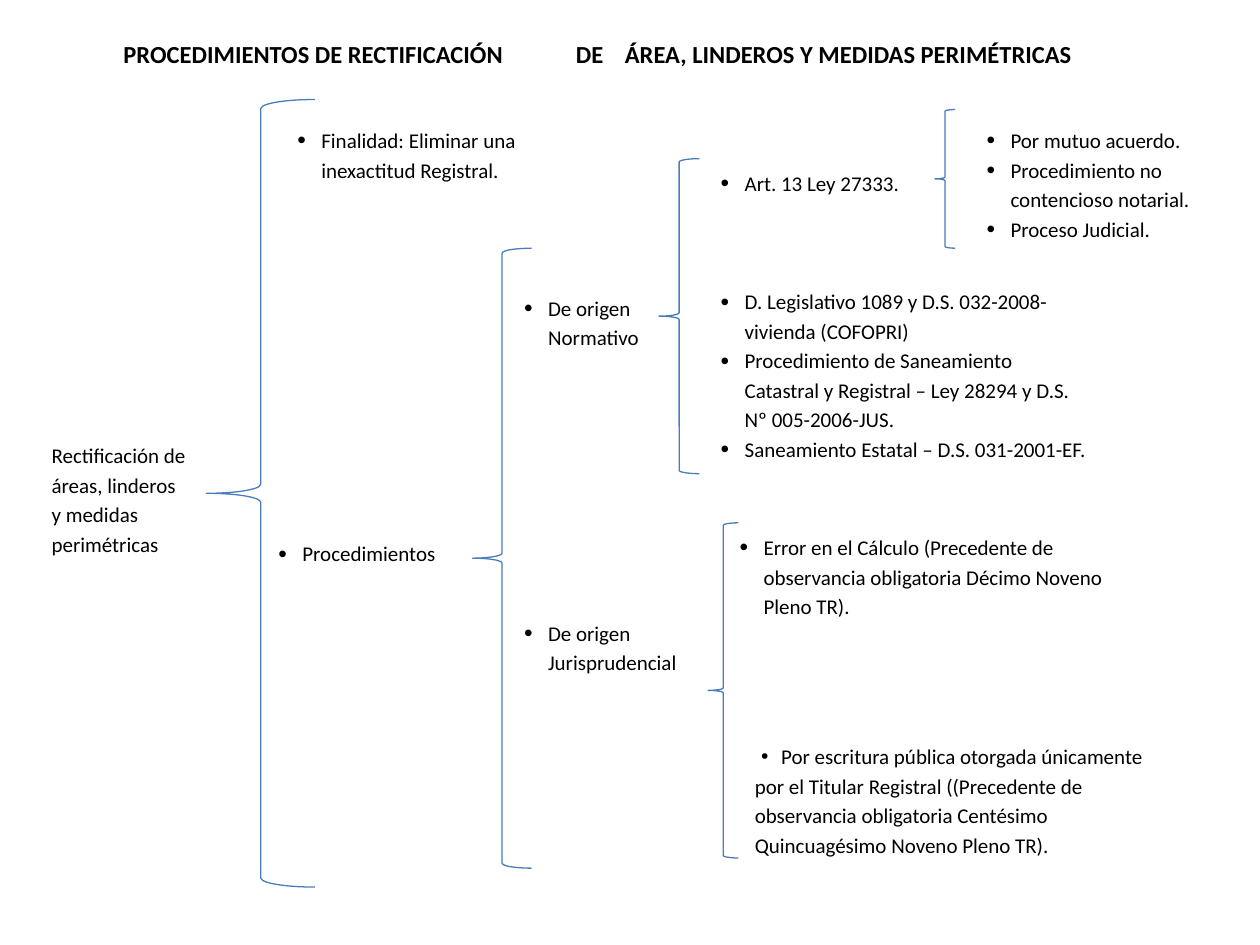
from lxml import etree
from pptx import Presentation
from pptx.dml.color import RGBColor
from pptx.enum.shapes import MSO_SHAPE
from pptx.oxml.ns import qn
from pptx.util import Inches, Pt

BRACE = MSO_SHAPE.LEFT_BRACE
BLUE = RGBColor(0x49, 0x7D, 0xBA)
BLACK = RGBColor(0, 0, 0)
FONT = "Calibri"
HANG = 0.19  # bullet to text

# Title pieces: left, width, text
TITLE = [
    (0.98, 3.54, "PROCEDIMIENTOS DE RECTIFICACIÓN"),
    (4.57, 0.31, "DE"),
    (4.96, 4.1, "ÁREA, LINDEROS Y MEDIDAS PERIMÉTRICAS"),
]

# Braces: left, top, width, height
BRACES = [
    (1.64, 0.79, 0.86, 6.25),
    (3.75, 1.97, 0.47, 4.92),
    (5.23, 1.26, 0.32, 2.5),
    (7.42, 0.87, 0.16, 1.1),
    (5.62, 4.15, 0.24, 2.66),
]

# Bulleted lists: left and top of the text, width, items (\v breaks a line)
LISTS = [
    (2.55, 0.98, 1.86, ["Finalidad: Eliminar una\vinexactitud Registral."]),
    (2.4, 4.26, 1.29, ["Procedimientos"]),
    (4.35, 2.31, 0.9, ["De origen\vNormativo"]),
    (4.35, 4.89, 1.25, ["De origen\vJurisprudencial"]),
    (5.91, 1.32, 1.49, ["Art. 13 Ley 27333."]),
    (8.02, 0.98, 1.72, [
        "Por mutuo acuerdo.",
        "Procedimiento no\vcontencioso notarial.",
        "Proceso Judicial.",
    ]),
    (5.91, 2.26, 3.22, [
        "D. Legislativo 1089 y D.S. 032-2008-\vvivienda (COFOPRI)",
        "Procedimiento de Saneamiento\v"
        "Catastral y Registral – Ley 28294 y D.S.\vNº 005-2006-JUS.",
        "Saneamiento Estatal – D.S. 031-2001-EF.",
    ]),
    (6.06, 4.21, 3.2, [
        "Error en el Cálculo (Precedente de\v"
        "observancia obligatoria Décimo Noveno\vPleno TR).",
    ]),
]

ROOT = "Rectificación de\váreas, linderos\vy medidas\vperimétricas"
DEED = [
    "Por escritura pública otorgada únicamente",
    "por el Titular Registral ((Precedente de\v"
    "observancia obligatoria Centésimo\vQuincuagésimo Noveno Pleno TR).",
]


def add_text(slide, left, top, width, items, size=12, bold=False):
    pitch = 16.85 if size == 12 else 17.2
    lines = sum(item.count("\v") + 1 for item in items)
    box = slide.shapes.add_textbox(
        Inches(left), Inches(top), Inches(width), Inches(lines * pitch / 72))
    frame = box.text_frame
    frame.margin_left = frame.margin_right = 0
    frame.margin_top = frame.margin_bottom = 0
    frame.word_wrap = False
    for i, item in enumerate(items):
        para = frame.paragraphs[0] if i == 0 else frame.add_paragraph()
        para.text = item
        para.line_spacing = Pt(pitch)
        para.font.name = FONT
        para.font.size = Pt(size)
        para.font.bold = bold
        para.font.color.rgb = BLACK
    return frame.paragraphs


def set_bullet(para, margin=HANG, hang=HANG, scale=117):
    props = para._p.get_or_add_pPr()
    props.set("marL", str(Inches(margin)))
    props.set("indent", str(-Inches(hang)))
    parts = [("a:buSzPct", "val", str(scale * 1000)),
             ("a:buFont", "typeface", "Arial"),
             ("a:buChar", "char", "•")]
    marks = [etree.Element(qn(tag), {key: val}) for tag, key, val in parts]
    # Bullet marks stand before the default run properties
    spot = props.index(props.find(qn("a:defRPr")))
    props[spot:spot] = marks


def main():
    deck = Presentation()
    deck.slide_width, deck.slide_height = Inches(10), Inches(7.5)
    slide = deck.slides.add_slide(deck.slide_layouts[6])

    # Braces
    for spot in BRACES:
        brace = slide.shapes.add_shape(BRACE, *map(Inches, spot))
        brace.shadow.inherit = False
        brace.fill.background()
        brace.line.color.rgb = BLUE
        brace.line.width = Pt(0.75)

    # Title
    for left, width, text in TITLE:
        add_text(slide, left, 0.3, width, [text], 14, True)

    # Root and bulleted branches
    add_text(slide, 0.41, 3.48, 1.3, [ROOT])
    for left, top, width, items in LISTS:
        for para in add_text(slide, left - HANG, top, width + HANG, items):
            set_bullet(para)

    # Public deed: the first line is set further in than the rest
    first, _ = add_text(slide, 5.99, 5.87, 3.38, DEED)
    set_bullet(first, 0.21, 0.16, 100)

    deck.save("out.pptx")


if __name__ == "__main__":
    main()
